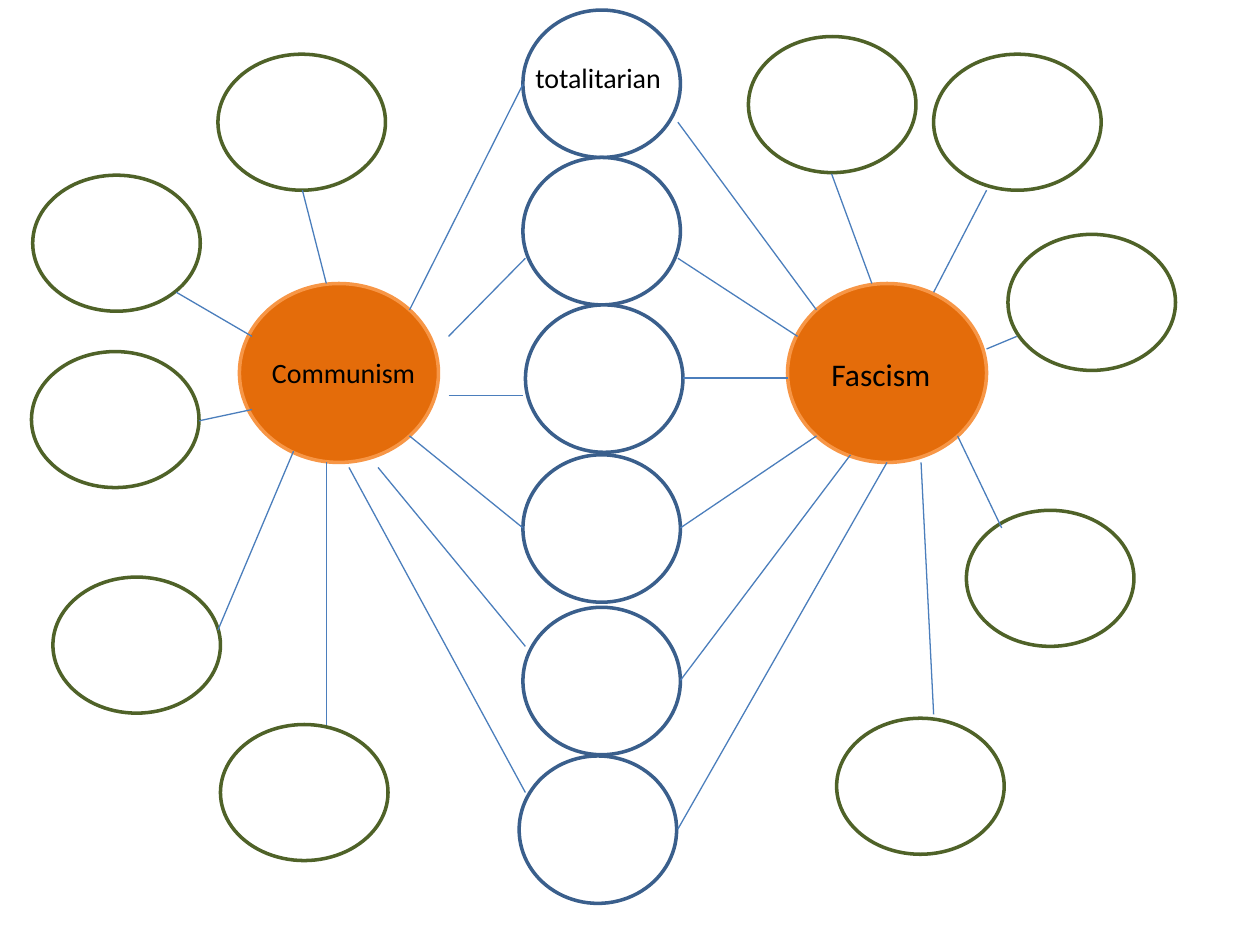
from pptx import Presentation
from pptx.dml.color import RGBColor
from pptx.enum.shapes import MSO_CONNECTOR, MSO_SHAPE
from pptx.enum.text import MSO_AUTO_SIZE
from pptx.oxml.ns import qn
from pptx.util import Inches, Pt
from lxml import etree

BLACK = RGBColor(0x00, 0x00, 0x00)
WHITE = RGBColor(0xFF, 0xFF, 0xFF)
ORANGE = RGBColor(0xE4, 0x6C, 0x0A)
LIGHT_ORANGE = RGBColor(0xF7, 0x96, 0x46)
BLUE = RGBColor(0x3A, 0x5F, 0x8C)
LINK_BLUE = RGBColor(0x4B, 0x7E, 0xBC)
GREEN = RGBColor(0x4F, 0x62, 0x28)

# Bubble groups: size, fill, outline, top-left corners
TOPICS = ((1.58, 1.42), ORANGE, LIGHT_ORANGE, [(1.9, 2.25), (6.25, 2.25)])
SHARED = ((1.25, 1.17), WHITE, BLUE, [
    (4.15, 0.08), (4.15, 1.25), (4.17, 2.42),
    (4.15, 3.61), (4.15, 4.82), (4.12, 6)])
COMMUNISM_ONLY = ((1.33, 1.08), WHITE, GREEN, [
    (1.73, 0.43), (0.26, 1.39), (0.25, 2.79), (0.42, 4.58), (1.75, 5.75)])
FASCISM_ONLY = ((1.33, 1.08), WHITE, GREEN, [
    (5.94, 0.29), (7.41, 0.43), (8, 1.86), (7.67, 4.05), (6.64, 5.7)])

# Links: (x1, y1, x2, y2)
COMMUNISM_SHARED = [
    (4.15, 0.67, 3.25, 2.46), (4.17, 2.05, 3.56, 2.67),
    (3.56, 3.14, 4.15, 3.14), (3.25, 3.46, 4.15, 4.19),
    (3, 3.71, 4.17, 5.13), (2.77, 3.71, 4.17, 6.29)]
FASCISM_SHARED = [
    (5.38, 0.97, 6.48, 2.46), (5.38, 2.05, 6.33, 2.67),
    (5.42, 3, 6.25, 3), (5.4, 4.19, 6.48, 3.46),
    (5.4, 5.4, 6.75, 3.61), (5.38, 6.58, 7.04, 3.67)]
COMMUNISM_LINKS = [
    (2.4, 1.51, 2.59, 2.25), (1.4, 2.32, 2, 2.67), (1.58, 3.34, 2, 3.25),
    (1.73, 5, 2.33, 3.58), (2.59, 5.75, 2.59, 3.67)]
FASCISM_LINKS = [
    (6.6, 1.38, 6.92, 2.25), (7.83, 1.51, 7.41, 2.32),
    (8.07, 2.67, 7.83, 2.77), (7.6, 3.46, 7.95, 4.19),
    (7.31, 3.67, 7.41, 5.67)]

# Labels: text, (left, top, width, height), size
LABELS = [
    ("Communism", (2.06, 2.77, 1.42, 0.37), 16),
    ("Fascism", (6.5, 2.77, 1.17, 0.4), 18),
    ("totalitarian", (4.15, 0.43, 1.22, 0.37), 16)]


def add_bubble(slide, corner, size, fill, outline):
    sp = slide.shapes.add_shape(MSO_SHAPE.OVAL, *map(Inches, corner + size))
    sp.shadow.inherit = False
    sp.fill.solid()
    sp.fill.fore_color.rgb = fill
    sp.line.color.rgb = outline
    sp.line.width = Pt(2)


def add_link(slide, ends):
    line = slide.shapes.add_connector(MSO_CONNECTOR.STRAIGHT, *map(Inches, ends))
    line.line.color.rgb = LINK_BLUE
    line.line.width = Pt(0.75)
    etree.SubElement(line._element.spPr, qn("a:effectLst"))


def add_label(slide, text, box, size=16, color=BLACK, font="Calibri"):
    tf = slide.shapes.add_textbox(*map(Inches, box)).text_frame
    tf.word_wrap = True
    tf.auto_size = MSO_AUTO_SIZE.SHAPE_TO_FIT_TEXT
    r = tf.paragraphs[0].add_run()
    r.text = text
    r.font.name = font
    r.font.size = Pt(size)
    r.font.color.rgb = color


def main():
    prs = Presentation()
    prs.slide_width, prs.slide_height = Inches(10), Inches(7.5)
    slide = prs.slides.add_slide(prs.slide_layouts[6])

    # Bubbles
    for size, fill, outline, corners in (TOPICS, SHARED, COMMUNISM_ONLY, FASCISM_ONLY):
        for corner in corners:
            add_bubble(slide, corner, size, fill, outline)

    # Links between topics and bubbles
    for ends in COMMUNISM_SHARED + FASCISM_SHARED + COMMUNISM_LINKS + FASCISM_LINKS:
        add_link(slide, ends)

    # Labels
    for text, box, size in LABELS:
        add_label(slide, text, box, size=size)

    prs.save("out.pptx")


if __name__ == "__main__":
    main()
